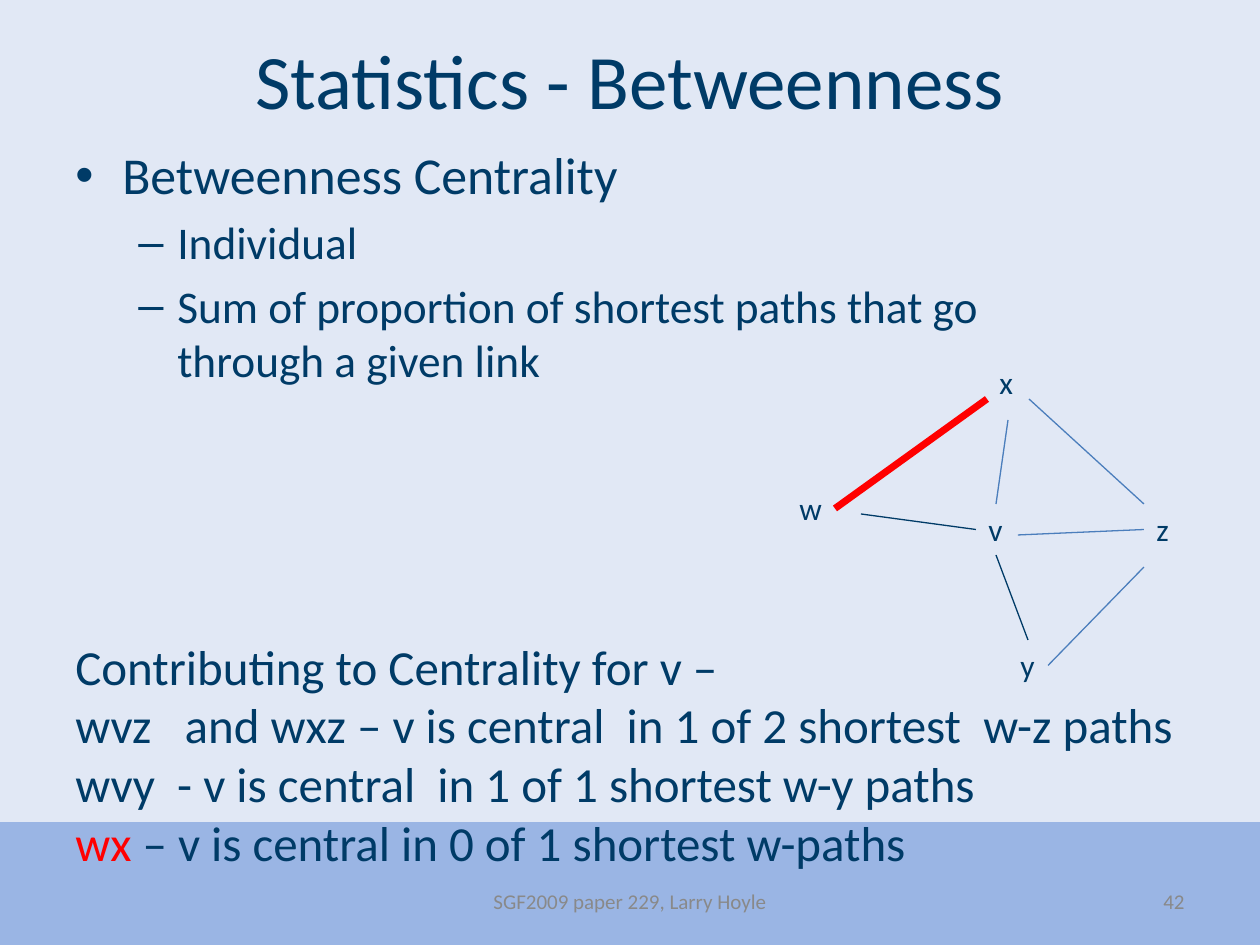
"""Build the slide on betweenness centrality with its small network graph."""
import pptx
import pptx.util
import pptx.dml.color
import pptx.enum.shapes
import pptx.enum.text
from lxml import etree

PX = 914400 / 126
FONT = "Calibri"
COLORS = {"navy": "003B67", "red": "FF0000", "blue": "4B7EBC", "gray": "898989",
          "band": "9AB5E4", "sky": "E1E8F5"}
ALIGN = pptx.enum.text.PP_ALIGN
ANCHOR = pptx.enum.text.MSO_ANCHOR
TOP, LEFT, BOTTOM, RIGHT = range(4)
SIDES = {TOP: (0.5, 0), LEFT: (0, 0.5), BOTTOM: (0.5, 1), RIGHT: (1, 0.5)}

TITLE = "Statistics - Betweenness"
OUTLINE = [
    (0, "Betweenness Centrality"),
    (1, "Individual"),
    (1, "Sum of proportion of shortest paths that go through a given link"),
]
LEVELS = [
    {"bullet": "•", "size": 29.6, "margin": 47, "hanging": 47},
    {"bullet": "–", "size": 25.9, "margin": 102, "hanging": 39},
]
CONTRIBUTIONS = [
    [("Contributing to Centrality for v –", "navy")],
    [("wvz   and wxz – v is central  in 1 of 2 shortest  w-z paths", "navy")],
    [("wvy  - v is central  in 1 of 1 shortest w-y paths", "navy")],
    [("wx", "red"), (" – v is central in 0 of 1 shortest w-paths", "navy")],
]
FOOTER = "SGF2009 paper 229, Larry Hoyle"
SLIDE_NUMBER = "42"

NODES = {
    "w": (787, 483, 48, 51),
    "x": (987, 357, 39, 51),
    "v": (976, 504, 40, 51),
    "y": (1008, 640, 40, 51),
    "z": (1144, 504, 38, 51),
}
EDGES = [
    (("w", RIGHT), (987, 399), "red", 4),
    ((1008, 420), ("v", TOP), "blue", 0.75),
    (("v", BOTTOM), ("y", TOP), "navy", 0.75),
    ((1018, 535), ("z", LEFT), "blue", 0.75),
    ((1029, 399), (1144, 504), "blue", 0.75),
    (("y", RIGHT), (1144, 567), "blue", 0.75),
    ((861, 514), ("v", LEFT), "navy", 0.75),
]


def px(length):
    return round(length * PX)


def rgb(name):
    return pptx.dml.color.RGBColor.from_string(COLORS[name])


def add_text(shapes, box, paragraphs, size, align=ALIGN.LEFT, anchor=ANCHOR.TOP, wrap=True):
    label = shapes.add_textbox(*map(px, box))
    frame = label.text_frame
    frame.word_wrap = wrap
    frame.vertical_anchor = anchor
    for i, runs in enumerate(paragraphs):
        paragraph = frame.paragraphs[0] if i == 0 else frame.add_paragraph()
        paragraph.alignment = align
        for text, color in runs:
            run = paragraph.add_run()
            run.text = text
            run.font.name = FONT
            run.font.size = pptx.util.Pt(size)
            run.font.color.rgb = rgb(color)
    return label


def add_outline(shapes, box):
    outline = add_text(shapes, box, [[(text, "navy")] for _, text in OUTLINE], LEVELS[0]["size"])
    for paragraph, (depth, _) in zip(outline.text_frame.paragraphs, OUTLINE):
        level = LEVELS[depth]
        paragraph.level = depth
        paragraph.space_before = pptx.util.Pt(round(level["size"] * 0.2, 1))
        paragraph.runs[0].font.size = pptx.util.Pt(level["size"])
        properties = paragraph._p.get_or_add_pPr()
        properties.set("marL", str(px(level["margin"])))
        properties.set("indent", str(-px(level["hanging"])))
        bullet_font = etree.SubElement(properties, pptx.oxml.ns.qn("a:buFont"))
        bullet_font.set("typeface", "Arial")
        bullet = etree.SubElement(properties, pptx.oxml.ns.qn("a:buChar"))
        bullet.set("char", level["bullet"])


def edge_point(at):
    if at[0] not in NODES:
        return at
    left, top, width, height = NODES[at[0]]
    across, down = SIDES[at[1]]
    return left + across * width, top + down * height


def add_graph(slide):
    graph = slide.shapes.add_group_shape().shapes
    nodes = {name: add_text(graph, box, [[(name, "navy")]], 18, wrap=False)
             for name, box in NODES.items()}
    for start, end, color, weight in EDGES:
        edge = graph.add_connector(pptx.enum.shapes.MSO_CONNECTOR.STRAIGHT,
                                   *map(px, edge_point(start) + edge_point(end)))
        for at, connect in ((start, edge.begin_connect), (end, edge.end_connect)):
            if at[0] in nodes:
                connect(nodes[at[0]], at[1])
        edge.line.color.rgb = rgb(color)
        edge.line.width = pptx.util.Pt(weight)
        etree.SubElement(edge._element.spPr, pptx.oxml.ns.qn("a:effectLst"))


def main():
    deck = pptx.Presentation()
    deck.slide_width, deck.slide_height = px(1260), px(945)
    slide = deck.slides.add_slide(deck.slide_layouts[6])

    backdrop = slide.background.fill
    backdrop.gradient()
    backdrop.gradient_angle = 90
    for stop, color in zip(backdrop.gradient_stops, ("band", "sky")):
        stop.position = 0.13
        stop.color.rgb = rgb(color)

    shapes = slide.shapes
    add_text(shapes, (63, 0, 1134, 158), [[(TITLE, "navy")]], 44, ALIGN.CENTER, ANCHOR.MIDDLE)
    add_outline(shapes, (63, 137, 1061, 252))
    add_text(shapes, (63, 630, 1197, 251), CONTRIBUTIONS, 28)
    add_graph(slide)
    add_text(shapes, (430, 876, 400, 50), [[(FOOTER, "gray")]], 12, ALIGN.CENTER, ANCHOR.MIDDLE)
    add_text(shapes, (903, 876, 294, 50), [[(SLIDE_NUMBER, "gray")]], 12,
             ALIGN.RIGHT, ANCHOR.MIDDLE)
    deck.save("out.pptx")


if __name__ == "__main__":
    main()
